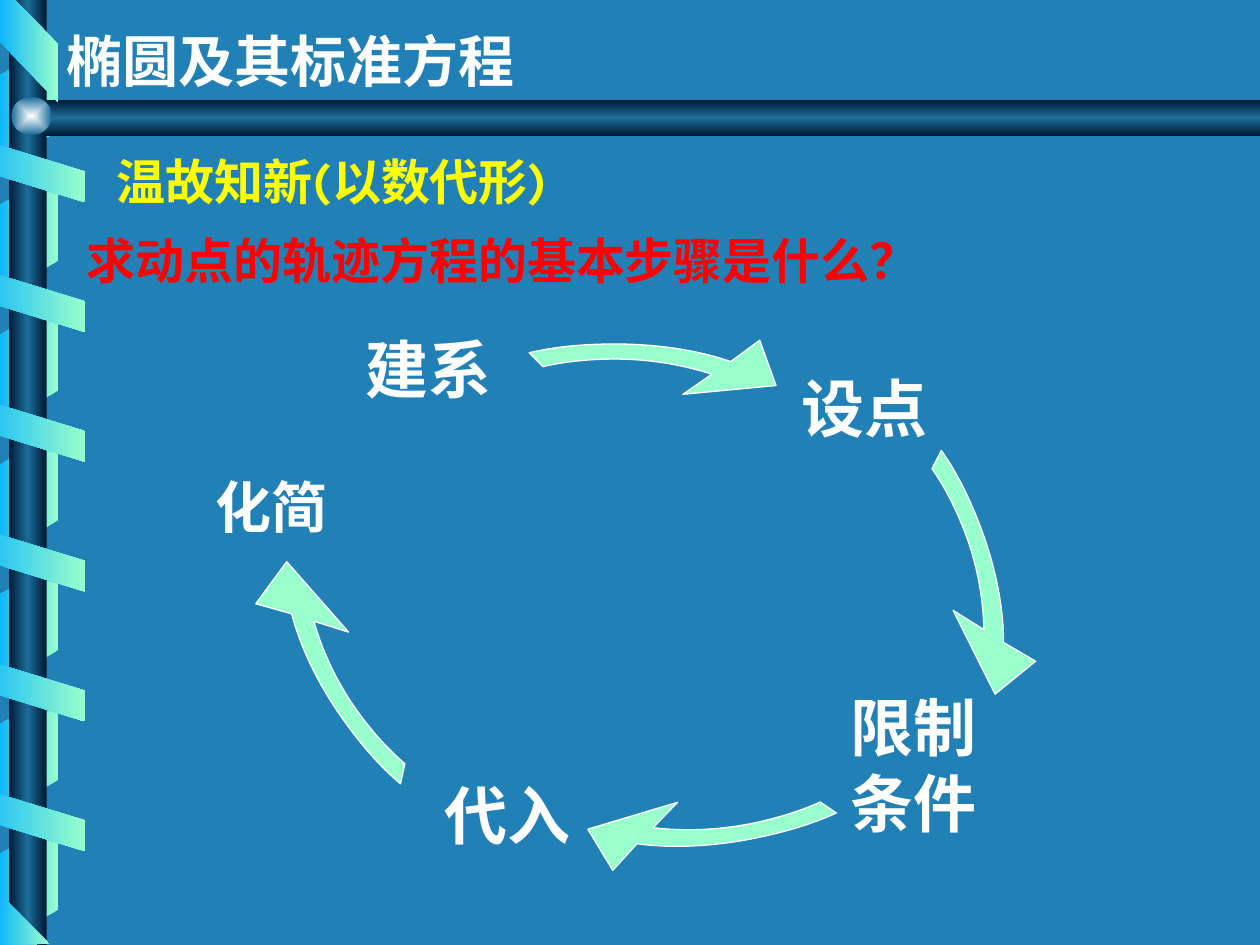
from lxml import etree
from pptx import Presentation
from pptx.dml.color import RGBColor
from pptx.enum.shapes import MSO_SHAPE
from pptx.enum.text import MSO_ANCHOR, MSO_AUTO_SIZE, PP_ALIGN
from pptx.oxml import parse_xml
from pptx.oxml.ns import nsdecls, qn
from pptx.util import Inches, Pt

PARALLELOGRAM = MSO_SHAPE.PARALLELOGRAM
RECTANGLE = MSO_SHAPE.RECTANGLE
PENTAGON = MSO_SHAPE.PENTAGON
OVAL = MSO_SHAPE.OVAL
TOP, MIDDLE = MSO_ANCHOR.TOP, MSO_ANCHOR.MIDDLE
NO_AUTOSIZE = MSO_AUTO_SIZE.NONE
LEFT = PP_ALIGN.LEFT

BACKGROUND = RGBColor(0x21, 0x81, 0xB7)
SKY = RGBColor(0x01, 0xB0, 0xFF)
MINT = RGBColor(0x99, 0xFF, 0xCC)
NAVY = RGBColor(0x00, 0x19, 0x32)
STEEL = RGBColor(0x1C, 0x6D, 0x9A)
PEARL = RGBColor(0xFE, 0xFF, 0xFF)
WHITE = RGBColor(0xFF, 0xFF, 0xFF)
RED = RGBColor(0xFF, 0x00, 0x00)
YELLOW = RGBColor(0xFF, 0xFF, 0x00)

SANS, SERIF, KARLA = "Noto Sans CJK SC", "Times New Roman", "Karla"
RIBBON_PITCH = 1.03
RIBBON_CENTER = 0.21
UNITS_PER_INCH = 1000

STEPS = [
    ("建系", (2.8, 2.57, 1.28, 0.7), 36),
    ("设点", (6.26, 2.88, 1.34, 0.7), 36),
    ("限制条件", (6.65, 5.41, 1.26, 1.31), 36),
    ("代入", (3.43, 6.11, 1.34, 0.7), 36),
    ("化简", (1.61, 3.7, 1.28, 0.64), 32),
]

ARROW_SIZE = (3.23, 1.58)
ARROW_PATH = [
    [(2.38, 0.24)],
    [(2.16, 0.17), (1.9, 0.12), (1.61, 0.12)],
    [(1.41, 0.12), (1.21, 0.14), (1.04, 0.18)],
    [(0.93, 0.07)],
    [(1.14, 0.02), (1.37, 0), (1.61, 0)],
    [(1.95, 0), (2.27, 0.05), (2.53, 0.14)],
    [(2.76, -0.03)],
    [(2.89, 0.33)],
    [(2.15, 0.4)],
]
ARROWS = [
    ((3.27, 2.73, 3.23, 1.58), 0),
    ((5.36, 3.63, 3.23, 1.73), 69.3),
    ((4.21, 5.09, 3.23, 1.58), 168.7),
    ((1.81, 4.34, 3.23, 1.73), 234.6),
]


def set_gradient(shape, colors, angle=None):
    last = len(colors) - 1
    stops = "".join(
        f'<a:gs pos="{100000 * index // last}"><a:srgbClr val="{color}"/></a:gs>'
        for index, color in enumerate(colors))
    if angle is None:
        direction = ('<a:path path="rect"><a:fillToRect l="50000" t="50000" '
                     'r="50000" b="50000"/></a:path>')
    else:
        direction = f'<a:lin ang="{angle * 60000}" scaled="0"/>'
    gradient = parse_xml(f'<a:gradFill {nsdecls("a")} rotWithShape="1">'
                         f'<a:gsLst>{stops}</a:gsLst>{direction}</a:gradFill>')
    shape.fill.background()
    properties = shape._element.spPr
    properties.replace(properties.find(qn("a:noFill")), gradient)
    shape.line.fill.background()
    shape.shadow.inherit = False


def place(shape, box):
    for name, value in zip(("left", "top", "width", "height"), box):
        setattr(shape, name, Inches(value))


def add_preset(slide, kind, box, colors, angle=None, adjustment=None,
               rotation=0, flipped=False):
    shape = slide.shapes.add_shape(kind, *map(Inches, box))
    if adjustment is not None:
        shape.adjustments[0] = adjustment
    shape.rotation = rotation
    if flipped:
        shape._element.spPr.xfrm.set("flipH", "1")
    set_gradient(shape, colors, angle)


def add_ribbons(slide, count, first_center, width, height, **options):
    for index in range(count):
        center = first_center + RIBBON_PITCH * index
        box = (RIBBON_CENTER - width / 2, center - height / 2, width, height)
        add_preset(slide, PARALLELOGRAM, box, angle=90, **options)


def add_outline(slide, points):
    scaled = [(x * UNITS_PER_INCH, y * UNITS_PER_INCH) for x, y in points]
    builder = slide.shapes.build_freeform(
        *scaled[0], scale=Inches(1) / UNITS_PER_INCH)
    builder.add_line_segments(scaled[1:], close=True)
    shape = builder.convert_to_shape()
    shape.shadow.inherit = False
    return shape


def build_curved_path():
    width, height = (round(value * UNITS_PER_INCH) for value in ARROW_SIZE)
    commands = ""
    for index, segment in enumerate(ARROW_PATH):
        tag = "moveTo" if index == 0 else "lnTo" if len(segment) == 1 else "cubicBezTo"
        points = "".join(
            f'<a:pt x="{round(x * UNITS_PER_INCH)}" y="{round(y * UNITS_PER_INCH)}"/>'
            for x, y in segment)
        commands += f"<a:{tag}>{points}</a:{tag}>"
    return parse_xml(f'<a:path {nsdecls("a")} w="{width}" h="{height}">'
                     f'{commands}<a:close/></a:path>')


def add_curved_arrow(slide, box, rotation):
    shape = add_outline(slide, [segment[-1] for segment in ARROW_PATH])
    path_list = shape._element.spPr.find(".//" + qn("a:pathLst"))
    path_list.replace(path_list[0], build_curved_path())
    place(shape, box)
    shape.rotation = rotation
    shape.fill.solid()
    shape.fill.fore_color.rgb = MINT
    shape.line.color.rgb = WHITE
    shape.line.width = Pt(0.75)


def write_text(shape, text, box, size, font_name, color, anchor=TOP):
    place(shape, box)
    frame = shape.text_frame
    frame_format = {"word_wrap": True, "auto_size": NO_AUTOSIZE,
                    "vertical_anchor": anchor}
    for name, value in frame_format.items():
        setattr(frame, name, value)
    paragraph = frame.paragraphs[0]
    paragraph.alignment = LEFT
    run = paragraph.add_run()
    run.text = text
    font_format = {"name": font_name, "size": Pt(size), "bold": True}
    for name, value in font_format.items():
        setattr(run.font, name, value)
    run.font.color.rgb = color
    east_asian = etree.SubElement(run._r.get_or_add_rPr(), qn("a:ea"))
    east_asian.set("typeface", SANS)


def add_label(slide, text, box, *style):
    shape = slide.shapes.add_textbox(*map(Inches, box))
    write_text(shape, text, box, *style)


def add_binding(slide):
    add_ribbons(slide, 7, 0.83, 0.98, 0.5, colors=[MINT, SKY],
                adjustment=0.56, rotation=90, flipped=True)
    rod = [NAVY, STEEL, NAVY]
    add_preset(slide, RECTANGLE, (0.07, 0, 0.3, 7.5), rod, 0)
    add_preset(slide, PENTAGON, (0.2, 0.79, 9.8, 0.29), rod, 90, 0.58, flipped=True)
    add_preset(slide, OVAL, (0.09, 0.77, 0.32, 0.3), [PEARL, STEEL])
    add_ribbons(slide, 6, 1.34, 0.53, 0.93, colors=[SKY, MINT],
                adjustment=0.54, rotation=270)
    ends = [
        [(-0.04, 0), (-0.04, 0.29), (0.46, 0.81), (0.46, 0.35), (0.12, 0)],
        [(0.39, 7.49), (-0.04, 7.05), (-0.04, 7.5)],
    ]
    for points in ends:
        set_gradient(add_outline(slide, points), [SKY, MINT], 0)


def main():
    presentation = Presentation()
    presentation.slide_width = Inches(10)
    presentation.slide_height = Inches(7.5)
    slide = presentation.slides.add_slide(presentation.slide_layouts[5])
    slide.background.fill.solid()
    slide.background.fill.fore_color.rgb = BACKGROUND
    add_binding(slide)
    write_text(slide.shapes.title, "椭圆及其标准方程", (0.43, 0.16, 6.77, 0.63),
               32, SANS, WHITE)
    for text, box, size in STEPS:
        add_label(slide, text, box, size, SERIF, WHITE, MIDDLE)
    for box, rotation in ARROWS:
        add_curved_arrow(slide, box, rotation)
    add_label(slide, "求动点的轨迹方程的基本步骤是什么？", (0.59, 1.78, 7.95, 0.57),
              28, SERIF, RED)
    add_label(slide, "温故知新(以数代形)", (0.83, 1.15, 6.14, 1.27),
              28, KARLA, YELLOW)
    presentation.save("out.pptx")


if __name__ == "__main__":
    main()
